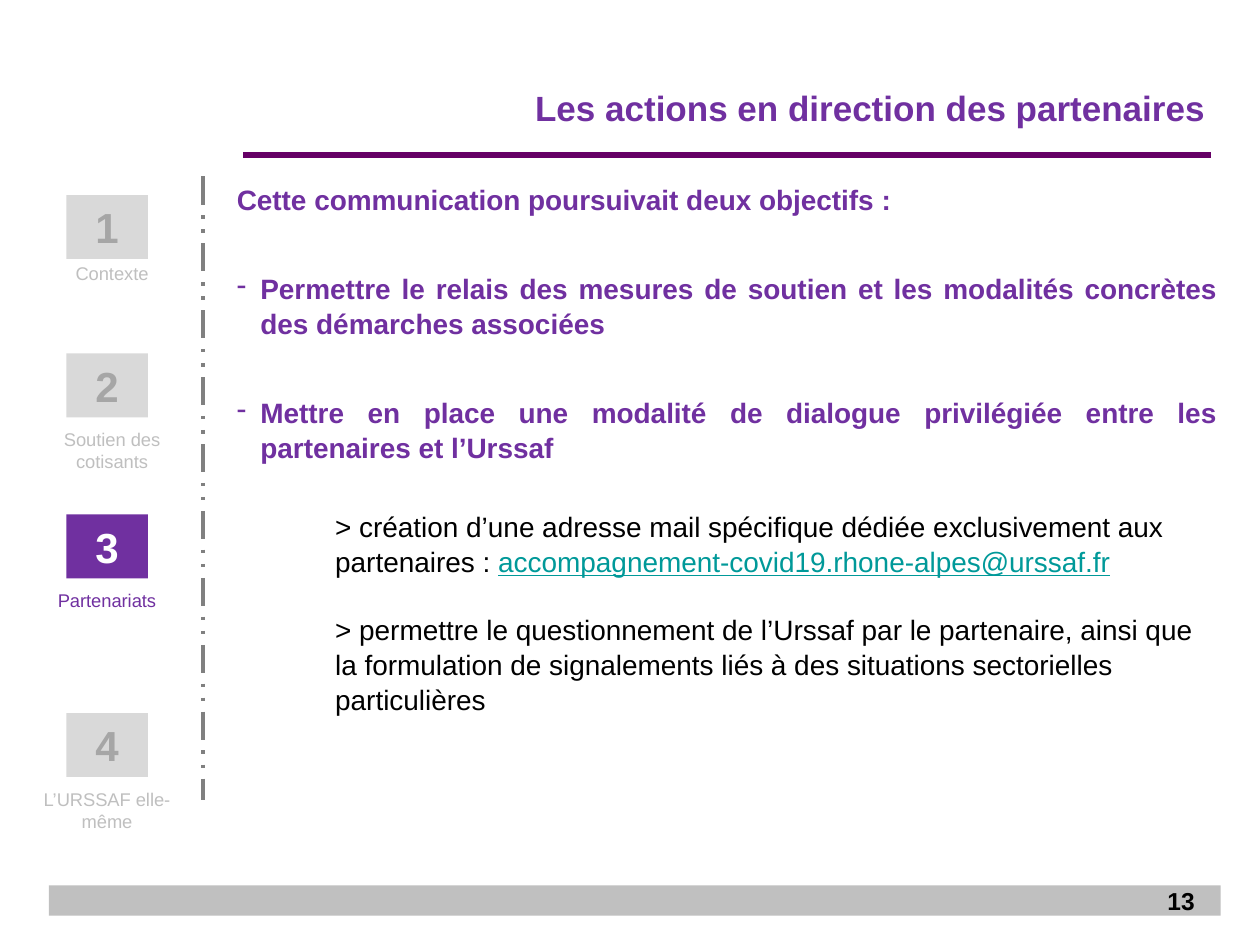
from lxml import etree
from pptx import Presentation
from pptx.dml.color import RGBColor
from pptx.enum.dml import MSO_LINE
from pptx.enum.shapes import MSO_CONNECTOR, MSO_SHAPE
from pptx.enum.text import MSO_ANCHOR, PP_ALIGN
from pptx.oxml.ns import qn
from pptx.util import Pt

RECT = MSO_SHAPE.RECTANGLE
STRAIGHT = MSO_CONNECTOR.STRAIGHT
DASH = MSO_LINE.DASH_DOT_DOT
MIDDLE = MSO_ANCHOR.MIDDLE
LEFT, CENTER, RIGHT, JUSTIFY = (
    PP_ALIGN.LEFT, PP_ALIGN.CENTER, PP_ALIGN.RIGHT, PP_ALIGN.JUSTIFY)

COLORS = {
    "purple": "7030A0", "rule": "660066", "divider": "808080",
    "footer": "C0C0C0", "box": "D9D9D9", "number": "A6A6A6",
    "label": "BFBFBF", "link": "009999", "black": "000000", "white": "FFFFFF",
}


def rgb(name):
    return RGBColor.from_string(COLORS[name])


class Deck:
    """Holds the font and the current slide, and draws elements in points."""
    font = "Arial"

    def __init__(self, prs):
        self.s = prs.slides.add_slide(prs.slide_layouts[6])

    def line(self, x1, y1, x2, y2, color, width, dash=None):
        c = self.s.shapes.add_connector(STRAIGHT, Pt(x1), Pt(y1), Pt(x2), Pt(y2))
        c.line.color.rgb = rgb(color)
        c.line.width = Pt(width)
        if dash is not None:
            c.line.dash_style = dash
        etree.SubElement(c._element.spPr, qn("a:effectLst"))

    def rect(self, x, y, w, h, fill):
        sp = self.s.shapes.add_shape(RECT, Pt(x), Pt(y), Pt(w), Pt(h))
        sp.shadow.inherit = False
        sp.fill.solid()
        sp.fill.fore_color.rgb = rgb(fill)
        sp.line.fill.background()
        return sp

    def box(self, x, y, w, h):
        tf = self.s.shapes.add_textbox(Pt(x), Pt(y), Pt(w), Pt(h)).text_frame
        tf.word_wrap = True
        return tf

    def run(self, p, text, color, **font):
        r = p.add_run()
        r.text = text
        r.font.color.rgb = rgb(color)
        for key, value in {"name": self.font, **font}.items():
            setattr(r.font, key, value)

    def text(self, x, y, w, h, text, color, align, **font):
        p = self.box(x, y, w, h).paragraphs[0]
        p.alignment = align
        self.run(p, text, color, **font)

    def number_box(self, x, y, text, fill, color):
        tf = self.rect(x, y, 46.5, 36.5, fill).text_frame
        tf.vertical_anchor = MIDDLE
        p = tf.paragraphs[0]
        p.alignment = CENTER
        self.run(p, text, color, size=Pt(24), bold=True)

    def paragraph(self, p, runs, indent=0, bullet=None, **layout):
        """Fill p with (text, color, font) runs; a bullet hangs in the indent."""
        pPr = p._p.get_or_add_pPr()
        pPr.set("marL", str(Pt(indent)))
        pPr.set("indent", str(-Pt(indent) if bullet else 0))
        for key, value in layout.items():
            setattr(p, key, value)
        if bullet:
            etree.SubElement(pPr, qn("a:buChar"), char=bullet)
        for text, color, font in runs:
            self.run(p, text, color, size=Pt(16), **font)


def main():
    prs = Presentation()
    prs.slide_width, prs.slide_height = Pt(720), Pt(540)
    deck = Deck(prs)

    deck.rect(28, 506, 669.5, 17.3, "footer")
    deck.text(660, 502.5, 45.5, 24.5, "13", "black", LEFT, size=Pt(14), bold=True)
    deck.line(139, 88.5, 692, 88.5, "rule", 3.5)
    deck.line(116, 100.8, 116, 457.2, "divider", 2, DASH)
    deck.text(84, 46, 612, 39.5, "Les actions en direction des partenaires",
              "purple", RIGHT, size=Pt(20), bold=True)

    steps = [  # number top, label left, label top, label
        (111.5, 17.3, 146.2, "Contexte"),
        (202, 17.3, 241.2, "Soutien des cotisants"),
        (294, 14.4, 333.4, "Partenariats"),
        (407.5, 14.4, 447.1, "L’URSSAF elle-même"),
    ]
    active = 3
    for i, (top, label_x, label_y, label) in enumerate(steps, 1):
        fill, number, ink = (("purple", "white", "purple") if i == active
                             else ("box", "number", "label"))
        deck.number_box(38, top, str(i), fill, number)
        deck.text(label_x, label_y, 93.6, 20, label, ink, CENTER, size=Pt(10.5))

    bold, plain = {"bold": True}, {"bold": False}
    goal = {"alignment": JUSTIFY, "space_after": Pt(6), "line_spacing": 1.04}
    bullet = {**goal, "indent": 13.5, "bullet": "-", "space_before": Pt(25)}
    detail = {"indent": 56.25, "space_before": Pt(19), "line_spacing": 1.04}
    content = [
        ([("Cette communication poursuivait deux objectifs :", "purple", bold)], goal),
        ([("Permettre le relais des mesures de soutien et les modalités concrètes "
           "des démarches associées", "purple", bold)], bullet),
        ([("Mettre en place une modalité de dialogue privilégiée entre les "
           "partenaires et l’Urssaf", "purple", bold)], bullet),
        ([("> création d’une adresse mail spécifique dédiée exclusivement aux "
           "partenaires : ", "black", plain),
          ("accompagnement-covid19.rhone-alpes@urssaf.fr", "link",
           {"underline": True})], detail),
        ([("> permettre le questionnement de l’Urssaf par le partenaire, ainsi que "
           "la formulation de signalements liés à des situations sectorielles "
           "particulières", "black", plain)], detail),
    ]
    tf = deck.box(128.2, 100, 574.5, 348)
    for i, (runs, layout) in enumerate(content):
        p = tf.add_paragraph() if i else tf.paragraphs[0]
        deck.paragraph(p, runs, **layout)

    prs.save("out.pptx")


if __name__ == "__main__":
    main()
